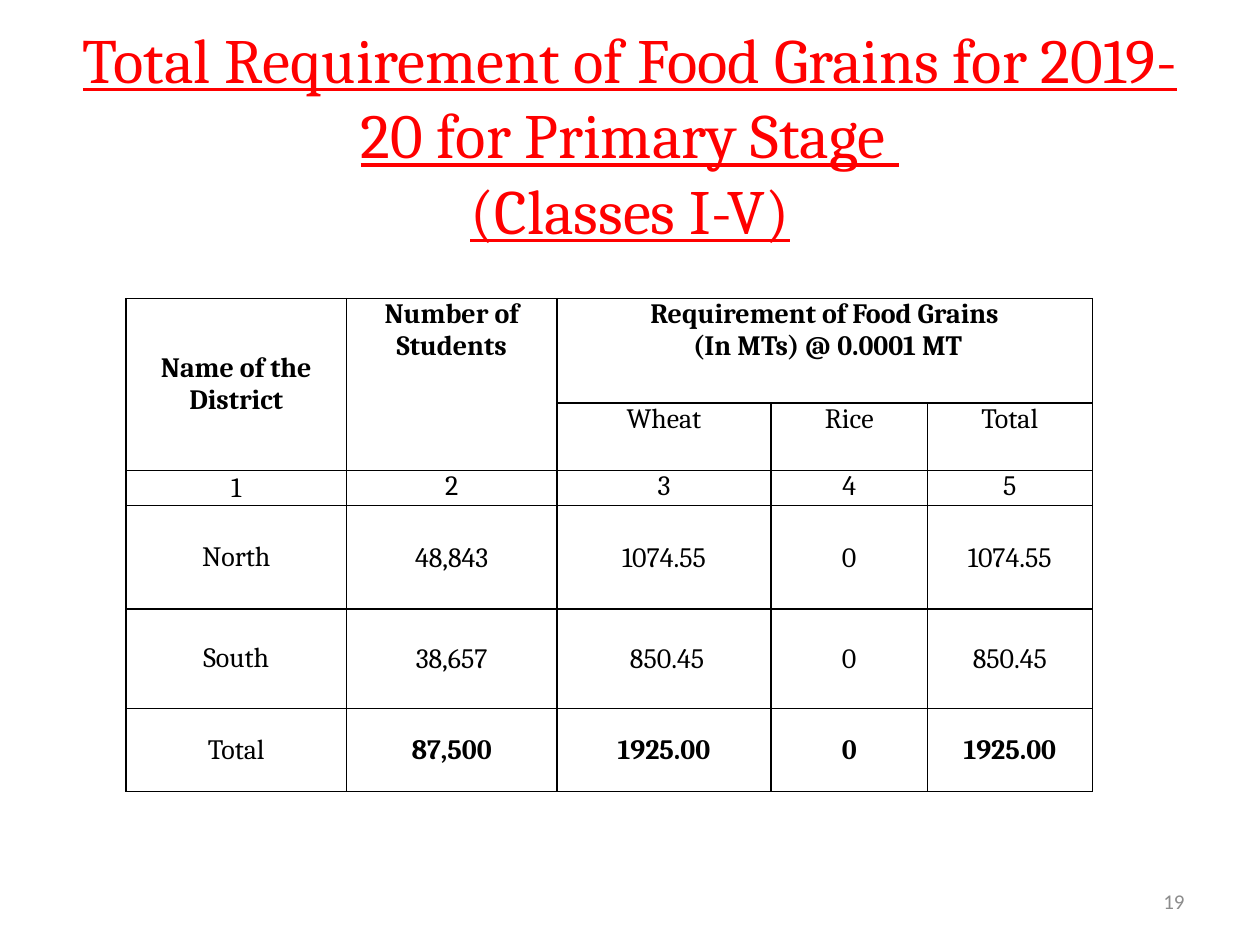
from lxml import etree
from pptx import Presentation
from pptx.dml.color import RGBColor
from pptx.enum.text import MSO_ANCHOR, PP_ALIGN
from pptx.oxml.ns import qn
from pptx.util import Inches, Pt

TOP, MIDDLE = MSO_ANCHOR.TOP, MSO_ANCHOR.MIDDLE
CENTER, RIGHT = PP_ALIGN.CENTER, PP_ALIGN.RIGHT

THEME = {
    "title": {"name": "Cambria", "size": Pt(36), "underline": True, "color": "FF0000"},
    "cell": {"name": "Cambria", "size": Pt(16), "bold": False, "color": "000000"},
    "head": {"name": "Cambria", "size": Pt(16), "bold": True, "color": "000000"},
    "page": {"name": "Calibri", "size": Pt(12), "color": "8C8C8C"},
    "paper": "FFFFFF",
    "rule": "000000",
}


def write(frame, text, style, align, anchor):
    """Fill a frame: newline starts a paragraph, vertical tab breaks a line."""
    frame.word_wrap = True
    frame.vertical_anchor = anchor
    frame.text = text
    for para in frame.paragraphs:
        para.alignment = align
        for run in para.runs:
            for key, value in THEME[style].items():
                if key == "color":
                    run.font.color.rgb = RGBColor.from_string(value)
                else:
                    setattr(run.font, key, value)


def border(cell):
    """Draw a thin line on all four sides of a cell."""
    props = cell._tc.get_or_add_tcPr()
    for side in ("lnL", "lnR", "lnT", "lnB"):
        line = etree.SubElement(props, qn(f"a:{side}"), w=str(Pt(1)))
        fill = etree.SubElement(line, qn("a:solidFill"))
        etree.SubElement(fill, qn("a:srgbClr"), val=THEME["rule"])


deck = Presentation()
deck.slide_width, deck.slide_height = Inches(10), Inches(7.5)
slide = deck.slides.add_slide(deck.slide_layouts[6])

# Title and page number
labels = [
    ((7.17, 6.95, 2.33, 0.4), "19", "page", RIGHT),
    ((0.5, 0.26, 9, 1.6),
     "Total Requirement of Food Grains for 2019-20 for Primary Stage \v(Classes I-V)",
     "title", CENTER),
]
for place, text, style, align in labels:
    box = slide.shapes.add_textbox(*map(Inches, place))
    write(box.text_frame, text, style, align, MIDDLE)

# Table grid
widths = [1.75, 1.67, 1.7, 1.24, 1.31]
heights = [0.83, 0.47, 0.28, 0.82, 0.79, 0.66]
rows = [
    ["Name of the District", "Number of Students",
     "Requirement of Food Grains\n (In MTs) @ 0.0001 MT", "", ""],
    ["", "", "Wheat", "Rice", "Total"],
    ["1", "2", "3", "4", "5"],
    ["North", "48,843", "1074.55", "0", "1074.55"],
    ["South", "38,657", " 850.45", "0", "850.45"],
    ["Total", "87,500", "1925.00", "0", "1925.00"],
]
last = len(rows) - 1
body = 3
table = slide.shapes.add_table(
    len(rows), len(widths), Inches(1), Inches(2.37),
    Inches(sum(widths)), Inches(sum(heights))).table
table.first_row = table.horz_banding = False
for col, width in zip(table.columns, widths):
    col.width = Inches(width)
for row, height in zip(table.rows, heights):
    row.height = Inches(height)

# Cells: figures sit tight, headings and names have side margins
for r, row in enumerate(rows):
    for c, text in enumerate(row):
        cell = table.cell(r, c)
        figure = r >= body and c > 0
        bold = r == 0 or (r == last and c > 0)
        side = Inches(0.01 if figure else 0.07)
        margins = {"margin_left": side, "margin_right": side,
                   "margin_top": Inches(0.01 if figure else 0), "margin_bottom": 0}
        for key, value in margins.items():
            setattr(cell, key, value)
        anchor = MIDDLE if c == 0 or r >= body else TOP
        write(cell.text_frame, text, "head" if bold else "cell", CENTER, anchor)
        cell.vertical_anchor = anchor
        border(cell)
        cell.fill.solid()
        cell.fill.fore_color.rgb = RGBColor.from_string(THEME["paper"])

# Merged headings
for start, end in [((0, 0), (1, 0)), ((0, 1), (1, 1)), ((0, 2), (0, 4))]:
    table.cell(*start).merge(table.cell(*end))

deck.save("out.pptx")
